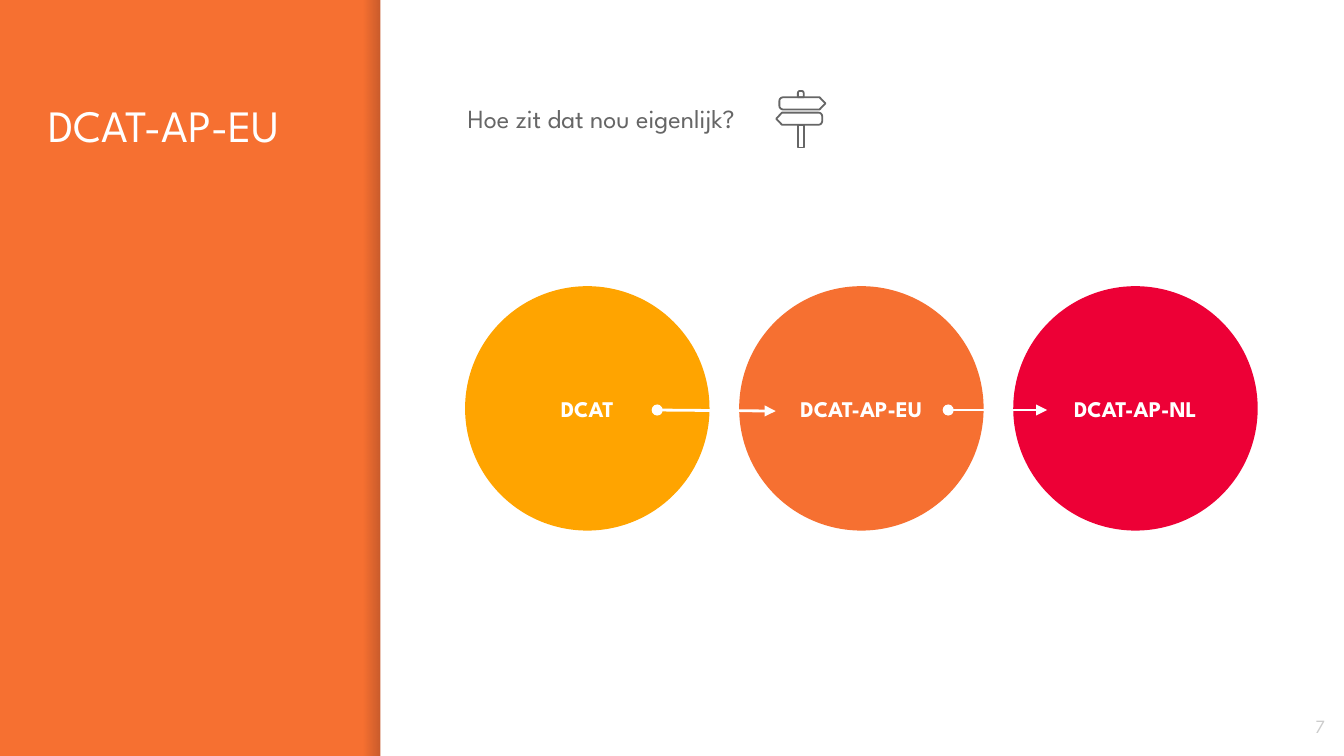
import math

import lxml.etree
import pptx
import pptx.dml.color
import pptx.enum.dml
import pptx.enum.shapes
import pptx.enum.text
import pptx.oxml.ns
import pptx.util

Cm = pptx.util.Cm
Pt = pptx.util.Pt
RGBColor = pptx.dml.color.RGBColor
Align = pptx.enum.text.PP_ALIGN
Anchor = pptx.enum.text.MSO_ANCHOR
Shape = pptx.enum.shapes.MSO_SHAPE
qn = pptx.oxml.ns.qn

ORANGE = RGBColor(0xF6, 0x70, 0x31)
YELLOW = RGBColor(0xFF, 0xA4, 0x00)
RED = RGBColor(0xED, 0x00, 0x36)
WHITE = RGBColor(0xFF, 0xFF, 0xFF)
GREY = RGBColor(0x66, 0x66, 0x66)
LIGHT_GREY = RGBColor(0xCC, 0xCC, 0xCC)
SHADE = RGBColor(0x00, 0x00, 0x14)

WIDTH, HEIGHT = 25.4, 14.29
PANEL_LEFT = 7.19
FONT = "League Spartan"


def write(frame, text, size, color, bold=False, align=Align.LEFT,
          anchor=Anchor.TOP, line_spacing=None, before=0, after=0):
    frame.word_wrap = True
    frame.vertical_anchor = anchor
    frame.margin_left = frame.margin_right = Cm(0.25)
    frame.margin_top = frame.margin_bottom = Cm(0.25)
    paragraph = frame.paragraphs[0]
    paragraph.alignment = align
    paragraph.line_spacing = line_spacing
    paragraph.space_before = Pt(before)
    paragraph.space_after = Pt(after)
    run = paragraph.add_run()
    run.text = text
    run.font.name = FONT
    run.font.size = Pt(size)
    run.font.bold = bold
    run.font.color.rgb = color


def arc(x, y, radius, start, end, steps=4):
    angles = [math.radians(start + (end - start) * i / steps) for i in range(steps + 1)]
    return [(x + radius * math.cos(a), y + radius * math.sin(a)) for a in angles]


def board(back, tip, top, height, radius=0.07):
    side = 1 if tip > back else -1
    shoulder = tip - side * 0.11
    bottom = top + height
    center = back + side * radius
    upper = arc(center, top + radius, radius, 270, 270 - side * 90)
    lower = arc(center, bottom - radius, radius, 90 + side * 90, 90)
    return upper + lower + [(shoulder, bottom), (tip, top + height / 2), (shoulder, top)]


class Deck:
    def __init__(self):
        self.presentation = pptx.Presentation()
        self.presentation.slide_width = Cm(WIDTH)
        self.presentation.slide_height = Cm(HEIGHT)
        self.slide = self.presentation.slides.add_slide(self.presentation.slide_layouts[6])

    def background(self, color):
        self.slide.background.fill.solid()
        self.slide.background.fill.fore_color.rgb = color

    def block(self, kind, left, top, width, height, color=None):
        shape = self.slide.shapes.add_shape(kind, Cm(left), Cm(top), Cm(width), Cm(height))
        shape.shadow.inherit = False
        shape.line.fill.background()
        if color is not None:
            shape.fill.solid()
            shape.fill.fore_color.rgb = color
        return shape

    def fade(self, left, top, width, height, color, opacities):
        fill = self.block(Shape.RECTANGLE, left, top, width, height).fill
        fill.gradient()
        fill.gradient_angle = 0
        for stop, opacity in zip(fill.gradient_stops, opacities):
            stop.color.rgb = color
        for tint, opacity in zip(fill._xPr.iter(qn("a:srgbClr")), opacities):
            lxml.etree.SubElement(tint, qn("a:alpha"), val=str(opacity * 1000))

    def text(self, text, left, top, width, height, **style):
        box = self.slide.shapes.add_textbox(Cm(left), Cm(top), Cm(width), Cm(height))
        write(box.text_frame, text, **style)

    def circle(self, text, left, top, diameter, color):
        shape = self.block(Shape.OVAL, left, top, diameter, diameter, color)
        write(shape.text_frame, text, size=12, color=WHITE, bold=True,
              align=Align.CENTER, anchor=Anchor.MIDDLE)

    def arrow(self, start, end, color):
        straight = pptx.enum.shapes.MSO_CONNECTOR.STRAIGHT
        line = self.slide.shapes.add_connector(straight, *map(Cm, start + end))
        line.line.color.rgb = color
        line.line.width = Pt(1.5)
        outline = line.line._get_or_add_ln()
        lxml.etree.SubElement(outline, qn("a:headEnd"), type="oval")
        lxml.etree.SubElement(outline, qn("a:tailEnd"), type="triangle")
        lxml.etree.SubElement(line._element.spPr, qn("a:effectLst"))

    def outline(self, points, color):
        corners = [(Cm(x), Cm(y)) for x, y in points]
        builder = self.slide.shapes.build_freeform(*corners[0])
        builder.add_line_segments(corners[1:], close=True)
        shape = builder.convert_to_shape()
        shape.shadow.inherit = False
        shape.fill.background()
        shape.line.color.rgb = color
        shape.line.width = Pt(0.96)


def main():
    deck = Deck()
    deck.background(ORANGE)
    deck.fade(PANEL_LEFT - 0.32, 0, 0.32, HEIGHT, SHADE, (0, 20))
    deck.block(Shape.RECTANGLE, PANEL_LEFT, 0, WIDTH - PANEL_LEFT, HEIGHT, WHITE)
    deck.text("DCAT-AP-EU", 0.66, 1.6, 5.97, 11.05, size=24, color=WHITE)
    deck.text("Hoe zit dat nou eigenlijk?", 8.59, 1.6, 15.54, 2.62, size=14, color=GREY,
              line_spacing=1.15, before=6, after=10)

    profiles = [("DCAT", YELLOW), ("DCAT-AP-EU", ORANGE), ("DCAT-AP-NL", RED)]
    for index, (profile, color) in enumerate(profiles):
        deck.circle(profile, 8.79 + index * 5.18, 5.41, 4.62, color)
    deck.arrow((12.42, 7.75), (14.66, 7.77), WHITE)
    deck.arrow((17.92, 7.75), (19.79, 7.75), WHITE)

    deck.text("7", 23.77, 13.18, 1.52, 1.09, size=10, color=LIGHT_GREY,
              align=Align.RIGHT, anchor=Anchor.MIDDLE)

    post_left, post_right = 15.08, 15.19
    cap = arc(15.12, 1.76, 0.04, 180, 270) + arc(15.15, 1.76, 0.04, 270, 360)
    post = [(post_left, 2.36), (post_left, 2.79), (post_right, 2.79), (post_right, 2.36)]
    signpost = [
        board(14.73, 15.6, 1.84, 0.23),
        board(15.54, 14.67, 2.13, 0.23),
        cap + [(post_right, 1.84), (post_left, 1.84)],
        post,
    ]
    for part in signpost:
        deck.outline(part, GREY)

    deck.presentation.save("out.pptx")


if __name__ == "__main__":
    main()
